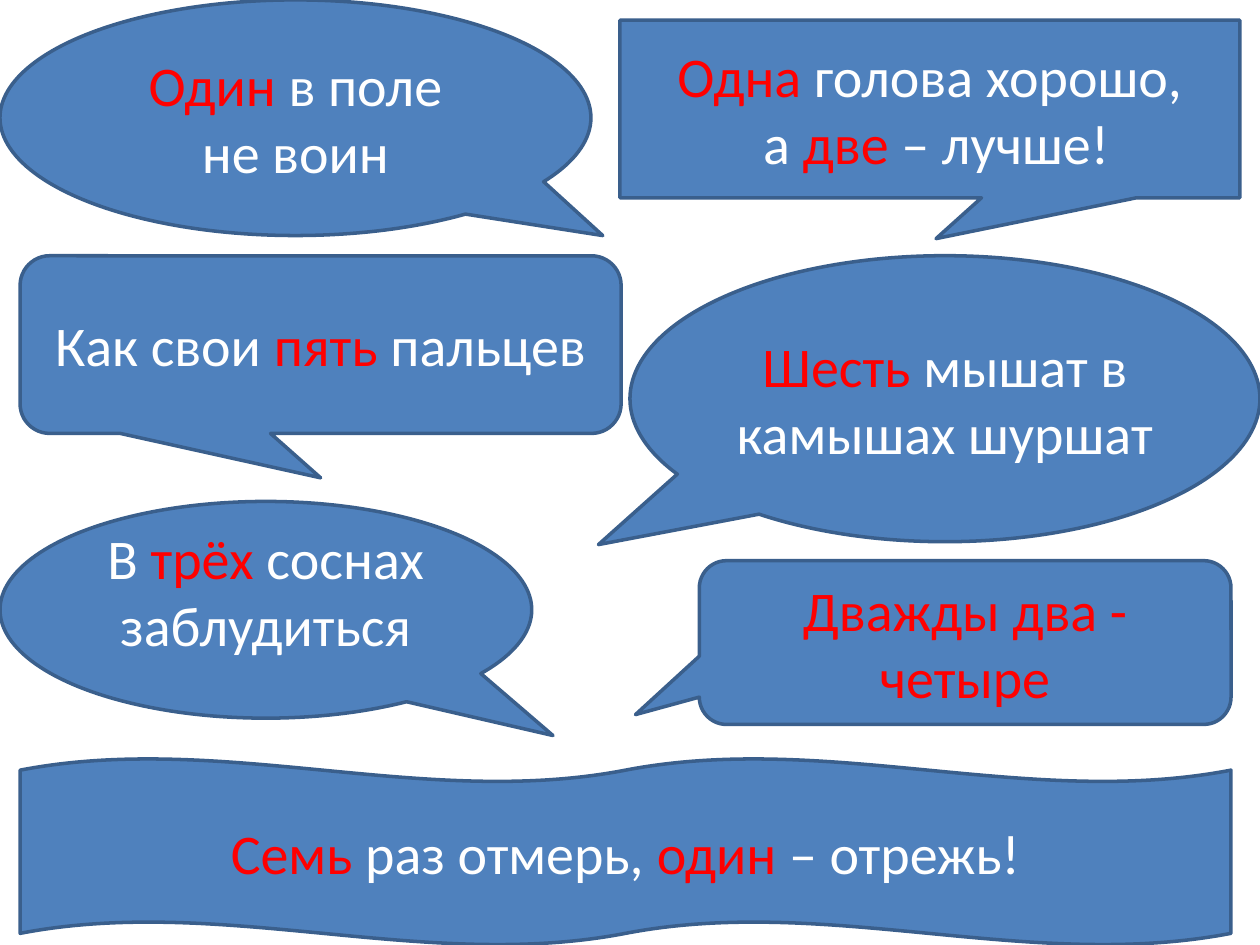
from dataclasses import dataclass

from pptx import Presentation
from pptx.dml.color import RGBColor
from pptx.enum.shapes import MSO_SHAPE
from pptx.enum.text import MSO_ANCHOR, PP_ALIGN
from pptx.util import Inches, Pt

OVAL = MSO_SHAPE.OVAL_CALLOUT
RECT = MSO_SHAPE.RECTANGULAR_CALLOUT
ROUND = MSO_SHAPE.ROUNDED_RECTANGULAR_CALLOUT
WAVE = MSO_SHAPE.DOUBLE_WAVE
MIDDLE = MSO_ANCHOR.MIDDLE
CENTER = PP_ALIGN.CENTER

BLUE = RGBColor(0x4F, 0x81, 0xBD)
OUTLINE = RGBColor(0x3A, 0x5F, 0x8C)
WHITE = RGBColor(0xFF, 0xFF, 0xFF)
RED = RGBColor(0xFF, 0x00, 0x00)

FONT = {"name": "Calibri", "size": Pt(32)}


@dataclass
class Saying:
    kind: MSO_SHAPE
    box: tuple[float, float, float, float]
    lines: tuple[str, ...]  # numerals between asterisks are red
    tail: tuple[float, ...] = ()
    bottom_inset: float = 0.05


SAYINGS = (
    Saying(RECT, (4.92, 0.16, 4.92, 1.41),
           ("*Одна* голова хорошо,", " а *две* – лучше!"), (0.01, 0.73)),
    Saying(OVAL, (0, 0, 4.69, 1.87),
           ("*Один* в поле", "не воин"), (0.52, 0.5)),
    Saying(ROUND, (0.16, 2.03, 4.77, 1.41),
           ("Как свои *пять* пальцев",), (0, 0.75)),
    Saying(OVAL, (5, 2.03, 5, 2.27),
           ("*Шесть* мышат в камышах шуршат",), (-0.55, 0.51)),
    Saying(WAVE, (0.16, 6.02, 9.61, 1.48),
           ("*Семь* раз отмерь, *один* – отрежь!",)),
    Saying(OVAL, (0, 3.98, 4.22, 1.72),
           ("В *трёх* соснах заблудиться",), (0.54, 0.58), 0.35),
    Saying(ROUND, (5.55, 4.45, 4.22, 1.3),
           ("*Дважды два - четыре*",), (-0.62, 0.44)),
)


def add_line(p, line: str) -> None:
    """Write one centred line, with the parts between asterisks in red."""
    p.alignment = CENTER
    for i, part in enumerate(line.split("*")):
        if not part:
            continue
        r = p.add_run()
        r.text = part
        for name, value in FONT.items():
            setattr(r.font, name, value)
        r.font.color.rgb = RED if i % 2 else WHITE


def add_saying(slide, saying: Saying) -> None:
    sp = slide.shapes.add_shape(saying.kind, *map(Inches, saying.box))
    for i, value in enumerate(saying.tail):
        sp.adjustments[i] = value
    sp.shadow.inherit = False
    sp.fill.solid()
    sp.fill.fore_color.rgb = BLUE
    sp.line.color.rgb = OUTLINE
    sp.line.width = Pt(2)

    tf = sp.text_frame
    tf.word_wrap = True
    tf.vertical_anchor = MIDDLE
    tf.margin_bottom = Inches(saying.bottom_inset)
    for i, line in enumerate(saying.lines):
        add_line(tf.add_paragraph() if i else tf.paragraphs[0], line)


def main() -> None:
    prs = Presentation()
    prs.slide_width, prs.slide_height = Inches(10), Inches(7.5)
    slide = prs.slides.add_slide(prs.slide_layouts[6])
    for saying in SAYINGS:
        add_saying(slide, saying)
    prs.save("out.pptx")


if __name__ == "__main__":
    main()
